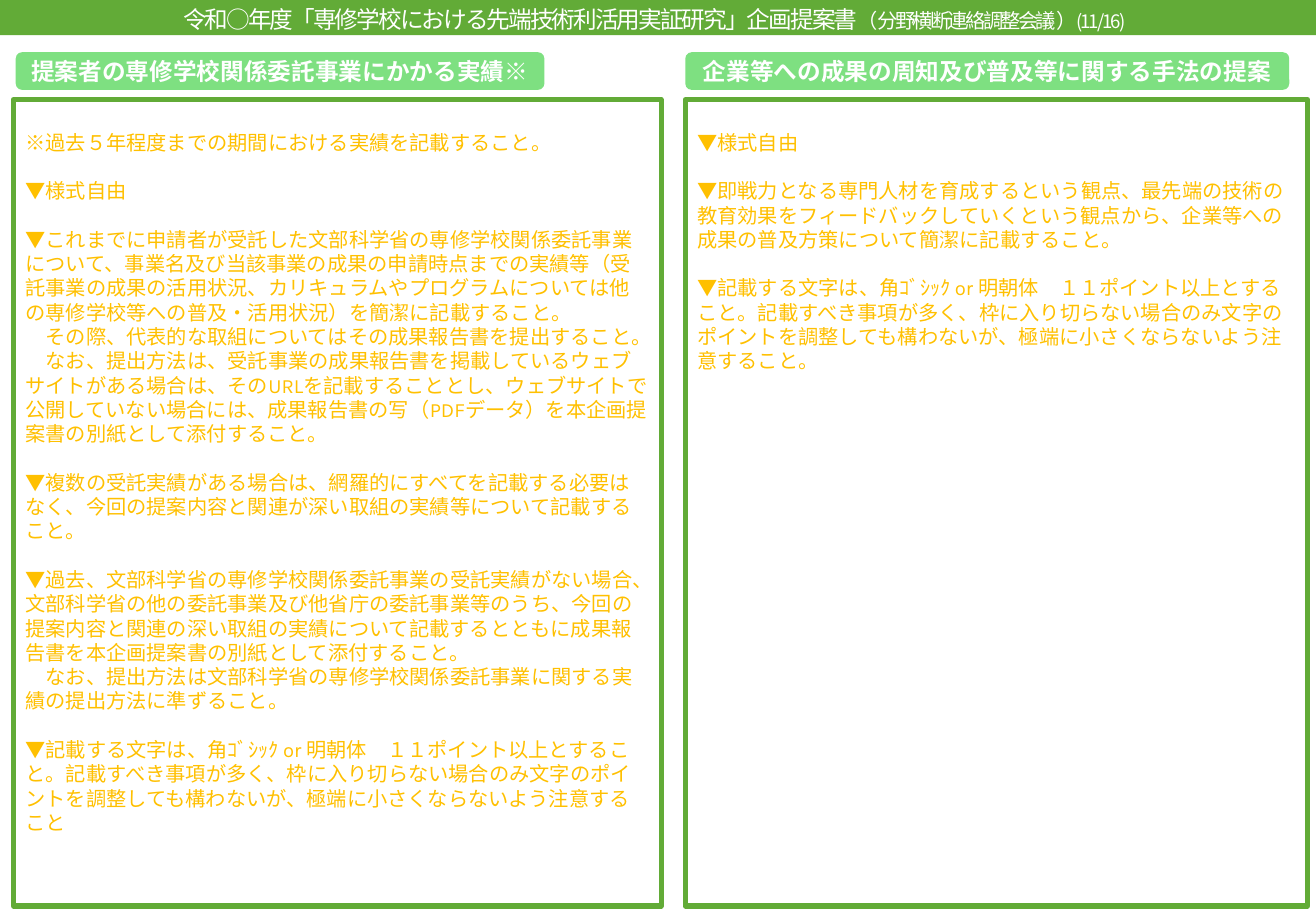
"""Build the proposal form slide with two titled, framed panels."""
import pptx
import pptx.util
import pptx.dml.color
import pptx.enum.shapes
import pptx.enum.text
import lxml.etree

Pt = pptx.util.Pt
SHAPE = pptx.enum.shapes.MSO_SHAPE
ALIGN = pptx.enum.text.PP_ALIGN
ANCHOR = pptx.enum.text.MSO_ANCHOR

COLORS = {"green": "62AB37", "mint": "7EE081", "gold": "FFC000", "white": "FFFFFF"}
LATIN, ASIAN = "Karla", "Noto Sans CJK JP"
LINE = 14.4

TITLE = [
    ("令和○年度「専修学校における先端技術利活用実証研究」企画提案書", 14, -1.2),
    ("（", 12, -1.2),
    ("分野横断連絡調整会議", 12, -1.6),
    ("）", 12, -1.2),
    ("(11/16)", 11, -1.2),
]
FORMAT = (
    "▼記載する文字は、角ｺﾞｼｯｸ or 明朝体　１１ポイント以上とすること。"
    "記載すべき事項が多く、枠に入り切らない場合のみ文字のポイントを調整しても"
    "構わないが、極端に小さくならないよう注意すること"
)
RECORD = [
    ["※過去５年程度までの期間における実績を記載すること。"],
    ["▼様式自由"],
    [
        "▼これまでに申請者が受託した文部科学省の専修学校関係委託事業について、"
        "事業名及び当該事業の成果の申請時点までの実績等（受託事業の成果の活用状況、"
        "カリキュラムやプログラムについては他の専修学校等への普及・活用状況）を"
        "簡潔に記載すること。",
        "　その際、代表的な取組についてはその成果報告書を提出すること。",
        "　なお、提出方法は、受託事業の成果報告書を掲載しているウェブサイトがある場合は、"
        "そのURLを記載することとし、ウェブサイトで公開していない場合には、"
        "成果報告書の写（PDFデータ）を本企画提案書の別紙として添付すること。",
    ],
    [
        "▼複数の受託実績がある場合は、網羅的にすべてを記載する必要はなく、"
        "今回の提案内容と関連が深い取組の実績等について記載すること。"
    ],
    [
        "▼過去、文部科学省の専修学校関係委託事業の受託実績がない場合、"
        "文部科学省の他の委託事業及び他省庁の委託事業等のうち、"
        "今回の提案内容と関連の深い取組の実績について記載するとともに"
        "成果報告書を本企画提案書の別紙として添付すること。",
        "　なお、提出方法は文部科学省の専修学校関係委託事業に関する実績の提出方法に準ずること。",
    ],
    [FORMAT],
]
SPREAD = [
    ["▼様式自由"],
    [
        "▼即戦力となる専門人材を育成するという観点、最先端の技術の教育効果を"
        "フィードバックしていくという観点から、企業等への成果の普及方策について"
        "簡潔に記載すること。"
    ],
    [FORMAT + "。"],
]
PANELS = [
    ("提案者の専修学校関係委託事業にかかる実績※", (1.2, 40.17), (1.02, 49.22), RECORD),
    ("企業等への成果の周知及び普及等に関する手法の提案", (52.08, 45.89), (52.08, 47.28), SPREAD),
]
LABEL_ROW, FRAME_ROW = (5.73, 4.13), (10.93, 88.53)

deck = pptx.Presentation()
deck.slide_width = pptx.util.Inches(10.83)
deck.slide_height = pptx.util.Inches(7.5)
slide = deck.slides.add_slide(deck.slide_layouts[5])


def place(col, row):
    """Turn percent spans into left, top, width and height."""
    wide, high = deck.slide_width / 100, deck.slide_height / 100
    return [int(n) for n in (col[0] * wide, row[0] * high, col[1] * wide, row[1] * high)]


def rgb(name):
    """Look up a colour by name."""
    return pptx.dml.color.RGBColor.from_string(COLORS[name])


def add_box(kind, col, row, fill=None):
    """Add a flat shape, filled or framed in green."""
    box = slide.shapes.add_shape(kind, *place(col, row))
    box.shadow.inherit = False
    if fill:
        box.fill.solid()
        box.fill.fore_color.rgb = rgb(fill)
        box.line.fill.background()
    else:
        box.fill.background()
        box.line.color.rgb = rgb("green")
        box.line.width = Pt(3)
    return box


def style(para, size, color, align, latin=LATIN, bold=False):
    """Set alignment and font of a whole paragraph."""
    para.alignment = align
    font = para.font
    font.size, font.bold, font.name = Pt(size), bold, latin
    font.color.rgb = rgb(color)
    base = para._p.pPr.find(pptx.oxml.ns.qn("a:defRPr"))
    lxml.etree.SubElement(base, pptx.oxml.ns.qn("a:ea"), typeface=ASIAN)


def add_label(text, col):
    """Add the rounded heading of a panel."""
    frame = add_box(SHAPE.ROUNDED_RECTANGLE, col, LABEL_ROW, "mint").text_frame
    frame.vertical_anchor = ANCHOR.MIDDLE
    frame.text = text
    style(frame.paragraphs[0], 14, "white", ALIGN.CENTER, bold=True)


def add_frame(groups, col):
    """Add a framed panel with one line of space between groups."""
    frame = add_box(SHAPE.RECTANGLE, col, FRAME_ROW).text_frame
    frame.word_wrap = True
    frame.vertical_anchor = ANCHOR.TOP
    frame.margin_top = Pt(LINE + 3.6)
    lines = [(text, not i and g > 0) for g, group in enumerate(groups) for i, text in enumerate(group)]
    for i, (text, gap) in enumerate(lines):
        para = frame.add_paragraph() if i else frame.paragraphs[0]
        para.text = text
        para.line_spacing = Pt(LINE)
        if gap:
            para.space_before = Pt(LINE)
        style(para, 12, "gold", ALIGN.LEFT)


def add_title():
    """Fill the title placeholder and lay it over the green band."""
    add_box(SHAPE.RECTANGLE, (0, 100), (0, 3.87), "green")
    title = slide.shapes.title
    title.element.getparent().append(title.element)
    title.left, title.top, title.width, title.height = place((-0.55, 100.55), (-0.13, 4.53))
    frame = title.text_frame
    frame.auto_size = pptx.enum.text.MSO_AUTO_SIZE.NONE
    frame.vertical_anchor = ANCHOR.MIDDLE
    frame.margin_top = frame.margin_bottom = 0
    para = frame.paragraphs[0]
    style(para, 14, "white", ALIGN.CENTER, ASIAN)
    for text, size, space in TITLE:
        run = para.add_run()
        run.text = text
        run.font.size = Pt(size)
        run._r.get_or_add_rPr().set("spc", str(round(space * 100)))


for head, tab, col, groups in PANELS:
    add_label(head, tab)
    add_frame(groups, col)
add_title()
deck.save("out.pptx")
